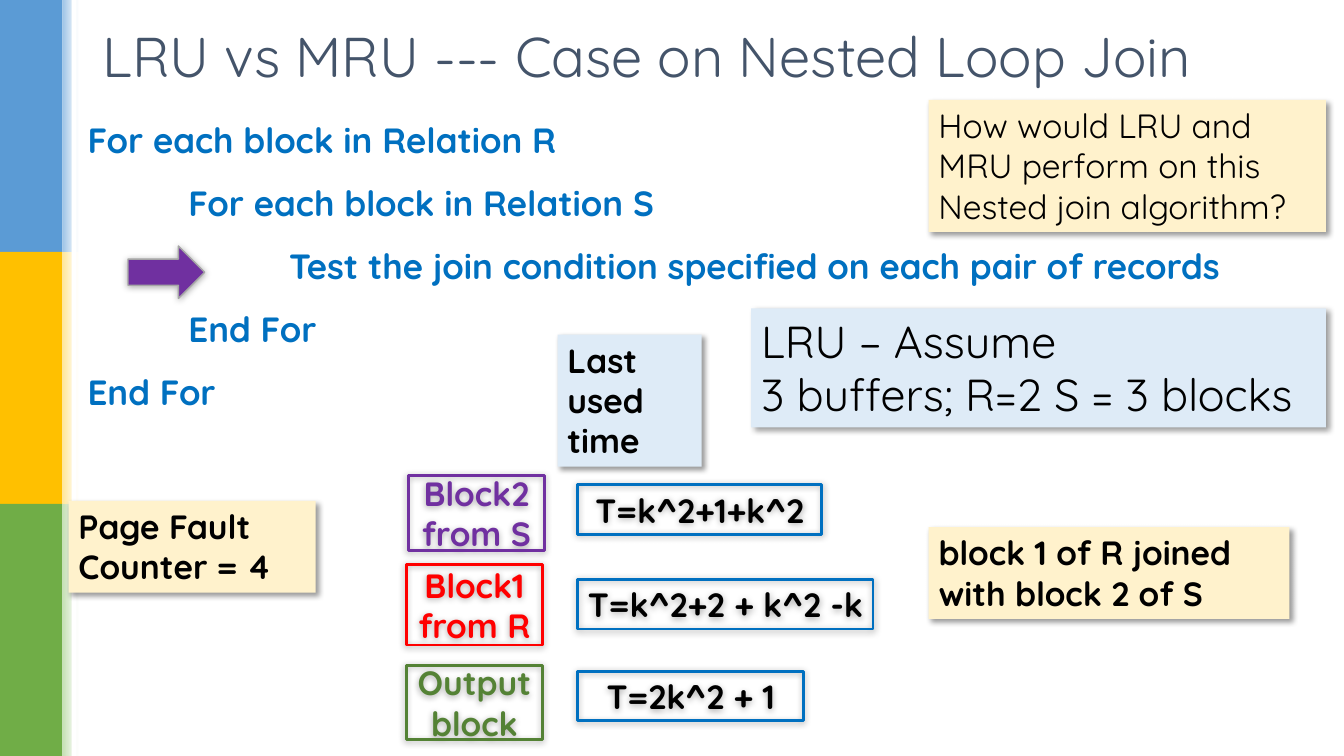
from lxml import etree
from pptx import Presentation
from pptx.dml.color import RGBColor
from pptx.enum.shapes import MSO_SHAPE
from pptx.enum.text import MSO_ANCHOR, PP_ALIGN
from pptx.oxml.ns import qn
from pptx.util import Inches, Pt

RECTANGLE, RIGHT_ARROW = MSO_SHAPE.RECTANGLE, MSO_SHAPE.RIGHT_ARROW
TOP, MIDDLE = MSO_ANCHOR.TOP, MSO_ANCHOR.MIDDLE
LEFT, CENTER, JUSTIFY = PP_ALIGN.LEFT, PP_ALIGN.CENTER, PP_ALIGN.JUSTIFY

BLACK = RGBColor(0x00, 0x00, 0x00)
WHITE = RGBColor(0xFF, 0xFF, 0xFF)
SLATE = RGBColor(0x44, 0x54, 0x6A)
BLUE = RGBColor(0x00, 0x70, 0xC0)
PURPLE = RGBColor(0x70, 0x30, 0xA0)
RED = RGBColor(0xFF, 0x00, 0x00)
GREEN = RGBColor(0x54, 0x82, 0x35)
GRAY = RGBColor(0xA5, 0xA5, 0xA5)
CREAM = RGBColor(0xFF, 0xF2, 0xCC)
PALE_BLUE = RGBColor(0xDE, 0xEB, 0xF7)
SIDEBAR_COLORS = [
    (RGBColor(0x5B, 0x9B, 0xD5), RGBColor(0x9D, 0xC3, 0xE6)),
    (RGBColor(0xFF, 0xC0, 0x00), RGBColor(0xFF, 0xE6, 0x99)),
    (RGBColor(0x70, 0xAD, 0x47), RGBColor(0xC5, 0xE0, 0xB4)),
]

# Opacity in percent, blur and distance in points, direction in degrees
NOTE_SHADOW = (40, 4, 3, 45)
FRAME_SHADOW = (32, 5, 1, 90)


class SlideBuilder:
    font_name = "Quicksand"

    def __init__(self, slide):
        self.slide = slide

    def shape(self, box, fill=None, line=None, line_width=2, shadow=None, kind=RECTANGLE):
        shape = self.slide.shapes.add_shape(kind, *map(Inches, box))
        shape.shadow.inherit = False
        if fill is None:
            shape.fill.background()
        else:
            shape.fill.solid()
            shape.fill.fore_color.rgb = fill
        if line is None:
            shape.line.fill.background()
        else:
            shape.line.color.rgb = line
            shape.line.width = Pt(line_width)
        if shadow:
            self.cast_shadow(shape, *shadow)
        return shape

    def cast_shadow(self, shape, opacity, blur, distance, direction):
        effects = shape._element.spPr.find(qn("a:effectLst"))
        outer = etree.SubElement(
            effects, qn("a:outerShdw"), blurRad=str(Pt(blur)), dist=str(Pt(distance)),
            dir=str(direction * 60000), algn="ctr", rotWithShape="0")
        color = etree.SubElement(outer, qn("a:srgbClr"), val=str(BLACK))
        etree.SubElement(color, qn("a:alpha"), val=str(opacity * 1000))

    def fill_text(self, shape, lines, size, color=BLACK, bold=False, align=LEFT, anchor=TOP,
                  wrap=True):
        frame = shape.text_frame
        frame.word_wrap = wrap
        frame.vertical_anchor = anchor
        frame.text = "\n".join(lines)
        for paragraph in frame.paragraphs:
            paragraph.alignment = align
            paragraph.font.name = self.font_name
            paragraph.font.size = Pt(size)
            paragraph.font.bold = bold
            paragraph.font.color.rgb = color
        return frame

    def text(self, box, lines, size, **style):
        return self.fill_text(self.slide.shapes.add_textbox(*map(Inches, box)), lines, size, **style)

    def note(self, box, lines, fill=CREAM, size=24, **style):
        self.fill_text(self.shape(box, fill, shadow=NOTE_SHADOW), lines, size, **style)

    def frame(self, box, label, line, color, wrap=True):
        self.fill_text(self.shape(box, line=line, shadow=FRAME_SHADOW), [label], 24,
                       color=color, bold=True, align=CENTER, anchor=MIDDLE, wrap=wrap)

    def sidebar(self):
        for row, (color, light) in enumerate(SIDEBAR_COLORS):
            self.shape((0, 2.5 * row, 0.62, 2.5), color)
            fade = self.shape((0.62, 2.5 * row, 0.16, 2.5))
            fade.fill.gradient()
            fade.fill.gradient_angle = 0
            for stop, shade in zip(fade.fill.gradient_stops, (light, WHITE)):
                stop.color.rgb = shade
        self.shape((0.71, 0, 0.05, 7.5), WHITE)

    def pseudocode(self, box, steps):
        """Add (depth, line) steps, indenting one inch per depth."""
        frame = self.text(box, [line for _, line in steps], 25, color=BLUE, bold=True)
        for index, (paragraph, (depth, _)) in enumerate(zip(frame.paragraphs, steps)):
            paragraph._p.get_or_add_pPr().set("marL", str(Inches(depth)))
            paragraph.line_spacing = 0.9
            paragraph.space_before = Pt(6 if index else 0)
            paragraph.space_after = Pt(12)


def main():
    presentation = Presentation()
    presentation.slide_width, presentation.slide_height = Inches(13.33), Inches(7.5)
    builder = SlideBuilder(presentation.slides.add_slide(presentation.slide_layouts[6]))

    builder.sidebar()
    builder.text((0.92, 0.12, 11.5, 0.86), ["LRU vs MRU --- Case on Nested Loop Join"],
                 40, color=SLATE, anchor=MIDDLE)
    builder.note((9.21, 0.99, 3.94, 1.31),
                 ["How would LRU and MRU perform on this Nested join algorithm?"])

    for top, width, time in [(4.81, 2.42, "T=k^2+1+k^2"),
                             (5.75, 2.93, "T=k^2+2 + k^2 -k"),
                             (6.66, 2.24, "T=2k^2 + 1")]:
        builder.frame((5.73, top, width, 0.49), time, BLUE, BLACK, wrap=False)
    builder.note((5.53, 3.32, 1.43, 1.31), ["Last used time"], PALE_BLUE, bold=True)

    builder.pseudocode((0.77, 1.17, 11.8, 3.08), [
        (0, "For each block in Relation R"),
        (1, "For each block in Relation S"),
        (2, "Test the join condition specified on each pair of records"),
        (1, "End For"),
        (0, "End For"),
    ])
    builder.shape((1.27, 2.44, 0.76, 0.52), PURPLE, GRAY, 1, FRAME_SHADOW, RIGHT_ARROW)

    for left, top, height, label, color in [(4.05, 4.72, 0.74, "Block2 from S", PURPLE),
                                            (4.03, 5.6, 0.8, "Block1 from R", RED),
                                            (4.03, 6.6, 0.74, "Output block", GREEN)]:
        builder.frame((left, top, 1.35, height), label, color, color)

    builder.note((0.68, 4.97, 2.45, 0.91), ["Page Fault Counter = 4"], bold=True)
    builder.note((7.45, 3.06, 5.7, 1.18), ["LRU – Assume", "3 buffers; R=2 S = 3 blocks"],
                 PALE_BLUE, 32, align=JUSTIFY)
    builder.note((9.21, 5.23, 3.58, 0.91), ["block 1 of R joined with block 2 of S"], bold=True)

    presentation.save("out.pptx")


if __name__ == "__main__":
    main()
